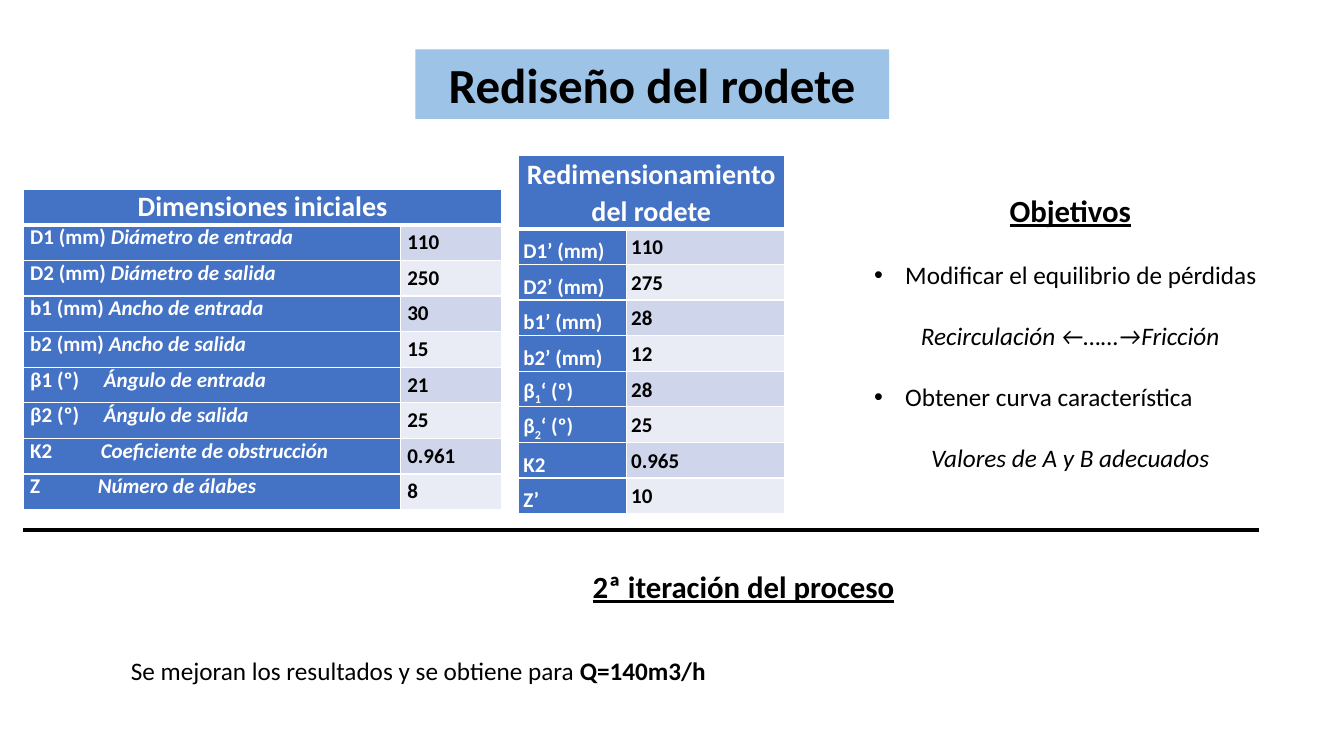
"""Build the slide on the impeller redesign and save it."""
from dataclasses import dataclass, field
from typing import Any

from lxml import etree
from pptx import Presentation
from pptx import util as u
from pptx.dml import color
from pptx.enum import shapes, text
from pptx.oxml import ns

BLACK, WHITE, BLUE, SKY = "000000", "FFFFFF", "4472C4", "9DC3E6"
BANDS = ("CFD5EA", "E9EBF5")
ALIGN = text.PP_ALIGN
ANCHOR = text.MSO_ANCHOR
MID = {"alignment": ALIGN.CENTER}
BOLD = {"bold": True}
SLANT = {"italic": True}
HEAD = {"bold": True, "underline": True, "size": u.Pt(22)}


@dataclass
class Bit:
    """A run of text with its font values."""
    words: str
    font: dict[str, Any] = field(default_factory=dict)
    sub: bool = False


@dataclass
class Para:
    """A paragraph with its format values."""
    bits: list[Bit]
    form: dict[str, Any] = field(default_factory=dict)
    dot: bool = False
    tab: float = 0


@dataclass
class Box:
    """A text box: place and text."""
    place: tuple[float, float, float, float]
    paras: list[Para]


@dataclass
class Row:
    """A table row: label runs and value."""
    label: list[Bit]
    value: str
    tab: float = 0


@dataclass
class Grid:
    """A table with a merged head and two columns."""
    place: tuple[float, float, float, float]
    cols: tuple[float, float]
    top: float
    title: str
    rows: list[Row]
    inset: float
    form: dict[str, Any]
    anchor: Any


def hue(code: str) -> color.RGBColor:
    """Turn a hex string into a colour."""
    return color.RGBColor.from_string(code)


def put(item: Any, form: dict[str, Any]) -> None:
    """Set each format value on the item."""
    for key, value in form.items():
        setattr(item, key, value)


def node(base: Any, tag: str, **vals: str) -> Any:
    """Add a drawing element below the base."""
    return etree.SubElement(base, ns.qn(tag), vals)


def write(frame: Any, paras: list[Para], ink: str, size: float) -> None:
    """Fill a text frame with paragraphs."""
    for i, para in enumerate(paras):
        p = frame.add_paragraph() if i else frame.paragraphs[0]
        put(p, para.form)
        prop = p._p.get_or_add_pPr()
        if para.dot:
            prop.set("marL", str(u.Inches(0.31)))
            prop.set("indent", str(-u.Inches(0.31)))
            node(prop, "a:buFont", typeface="Arial")
            node(prop, "a:buChar", char="•")
        if para.tab:
            tabs = node(prop, "a:tabLst")
            node(tabs, "a:tab", pos=str(u.Inches(para.tab)), algn="l")
        for bit in para.bits:
            run = p.add_run()
            run.text = bit.words
            put(run.font, {"name": "Calibri", "size": u.Pt(size)} | bit.font)
            run.font.color.rgb = hue(ink)
            if bit.sub:
                run._r.get_or_add_rPr().set("baseline", "-25000")


def frame(cell: Any, base: float) -> None:
    """Draw white borders round a cell."""
    prop = cell._tc.get_or_add_tcPr()
    for side, width in zip("LRTB", (1, 1, 1, base)):
        line = node(prop, f"a:ln{side}", w=str(u.Pt(width)))
        node(node(line, "a:solidFill"), "a:srgbClr", val=WHITE)


def draw(slide: Any, grid: Grid) -> None:
    """Draw a table."""
    place = map(u.Inches, grid.place)
    table = slide.shapes.add_table(len(grid.rows) + 1, 2, *place).table
    for col, width in zip(table.columns, grid.cols):
        col.width = u.Inches(width)
    table.rows[0].height = u.Inches(grid.top)
    table.cell(0, 0).merge(table.cell(0, 1))

    def fill(r: int, c: int, para: Para, back: str, ink: str, size: float,
             anchor: Any) -> None:
        """Style and fill one cell."""
        cell = table.cell(r, c)
        side = u.Inches(grid.inset)
        put(cell, {"margin_left": side, "margin_right": side, "margin_top": 0,
                   "margin_bottom": 0, "vertical_anchor": anchor})
        frame(cell, 1 if r else 3)
        cell.fill.solid()
        cell.fill.fore_color.rgb = hue(back)
        para.form = grid.form | para.form
        for bit in para.bits:
            bit.font = BOLD | bit.font
        write(cell.text_frame, [para], ink, size)

    fill(0, 0, Para([Bit(grid.title)], MID), BLUE, WHITE, 20, ANCHOR.MIDDLE)
    for r, row in enumerate(grid.rows, 1):
        fill(r, 0, Para(row.label, tab=row.tab), BLUE, WHITE, 15, grid.anchor)
        fill(r, 1, Para([Bit(row.value)]), BANDS[(r - 1) % 2], BLACK, 15,
             ANCHOR.MIDDLE)


def note(slide: Any, box: Box) -> None:
    """Draw a text box."""
    body = slide.shapes.add_textbox(*map(u.Inches, box.place)).text_frame
    put(body, {"word_wrap": True,
               "auto_size": text.MSO_AUTO_SIZE.SHAPE_TO_FIT_TEXT})
    write(body, box.paras, BLACK, 18)


def banner(slide: Any, words: str) -> None:
    """Draw the slide title."""
    place = map(u.Inches, (4.12, 0.49, 4.7, 0.69))
    shape = slide.shapes.add_shape(shapes.MSO_SHAPE.RECTANGLE, *place)
    shape.shadow.inherit = False
    shape.fill.solid()
    shape.fill.fore_color.rgb = hue(SKY)
    shape.line.fill.background()
    put(shape.text_frame, {"word_wrap": True, "vertical_anchor": ANCHOR.TOP})
    write(shape.text_frame, [Para([Bit(words, BOLD)], MID)], BLACK, 35)


def rule(slide: Any) -> None:
    """Draw the line across the slide."""
    ends = map(u.Inches, (0.23, 5.26, 12.49, 5.26))
    line = slide.shapes.add_connector(shapes.MSO_CONNECTOR.STRAIGHT, *ends)
    line.line.color.rgb = hue(BLACK)
    line.line.width = u.Pt(3)
    node(line._element.spPr, "a:effectLst")


FIRST = [("D1 (mm) ", "Diámetro de entrada", "110", 0),
         ("D2 (mm) ", "Diámetro de salida", "250", 0),
         ("b1 (mm) ", "Ancho de entrada", "30", 0),
         ("b2 (mm) ", "Ancho de salida", "15", 0),
         ("β1 (º)\t", "Ángulo de entrada", "21", 0.73),
         ("β2 (º)\t", "Ángulo de salida", "25", 0.73),
         ("K2\t", "Coeficiente de obstrucción", "0.961", 0.7),
         ("Z\t", "Número de álabes", "8", 0.67)]
NEXT = [("D1’ (mm)", "110"), ("D2’ (mm)", "275"), ("b1’ (mm)", "28"),
        ("b2’ (mm)", "12"), ("β|1|‘ (º)", "28"), ("β|2|‘ (º)", "25"),
        ("K2", "0.965"), ("Z’", "10")]
GRIDS = [
    Grid((5.14, 1.54, 2.64, 3.18), (1.07, 1.57), 0.73,
         "Redimensionamiento del rodete",
         [Row([Bit(part, sub=i == 1) for i, part in enumerate(sign.split("|"))],
              value) for sign, value in NEXT],
         0.05, {"line_spacing": 1.07, "space_before": u.Pt(12),
                "space_after": u.Pt(12)}, ANCHOR.BOTTOM),
    Grid((0.23, 1.88, 4.75, 3.18), (3.74, 1.01), 0.35, "Dimensiones iniciales",
         [Row([Bit(sign), Bit(name, SLANT)], value, tab)
          for sign, name, value, tab in FIRST],
         0.07, {"alignment": ALIGN.JUSTIFY, "space_before": u.Pt(12),
                "space_after": u.Pt(8)}, ANCHOR.TOP)]
GAP = {"space_after": u.Pt(22)}
NOTES = [
    Box((8.57, 1.85, 4.09, 2.89), [
        Para([Bit("Objetivos", HEAD)], MID | GAP),
        Para([Bit("Modificar el equilibrio de pérdidas")], GAP, True),
        Para([Bit("Recirculación ←……→Fricción", SLANT)], MID | GAP),
        Para([Bit("Obtener curva característica")], GAP, True),
        Para([Bit("Valores de A y B adecuados", SLANT)], MID)]),
    Box((1.2, 6.45, 6.22, 0.4), [
        Para([Bit("Se mejoran los resultados y se obtiene para "),
              Bit("Q=140m3/h", BOLD)])]),
    Box((5.78, 5.58, 3.29, 0.47),
        [Para([Bit("2ª iteración del proceso", HEAD)])])]


def main() -> None:
    """Build and save the deck."""
    deck = Presentation()
    put(deck, {"slide_width": u.Inches(13.33), "slide_height": u.Inches(7.5)})
    slide = deck.slides.add_slide(deck.slide_layouts[6])
    for grid in GRIDS:
        draw(slide, grid)
    for box in NOTES:
        note(slide, box)
    rule(slide)
    banner(slide, "Rediseño del rodete")
    deck.save("out.pptx")


if __name__ == "__main__":
    main()
